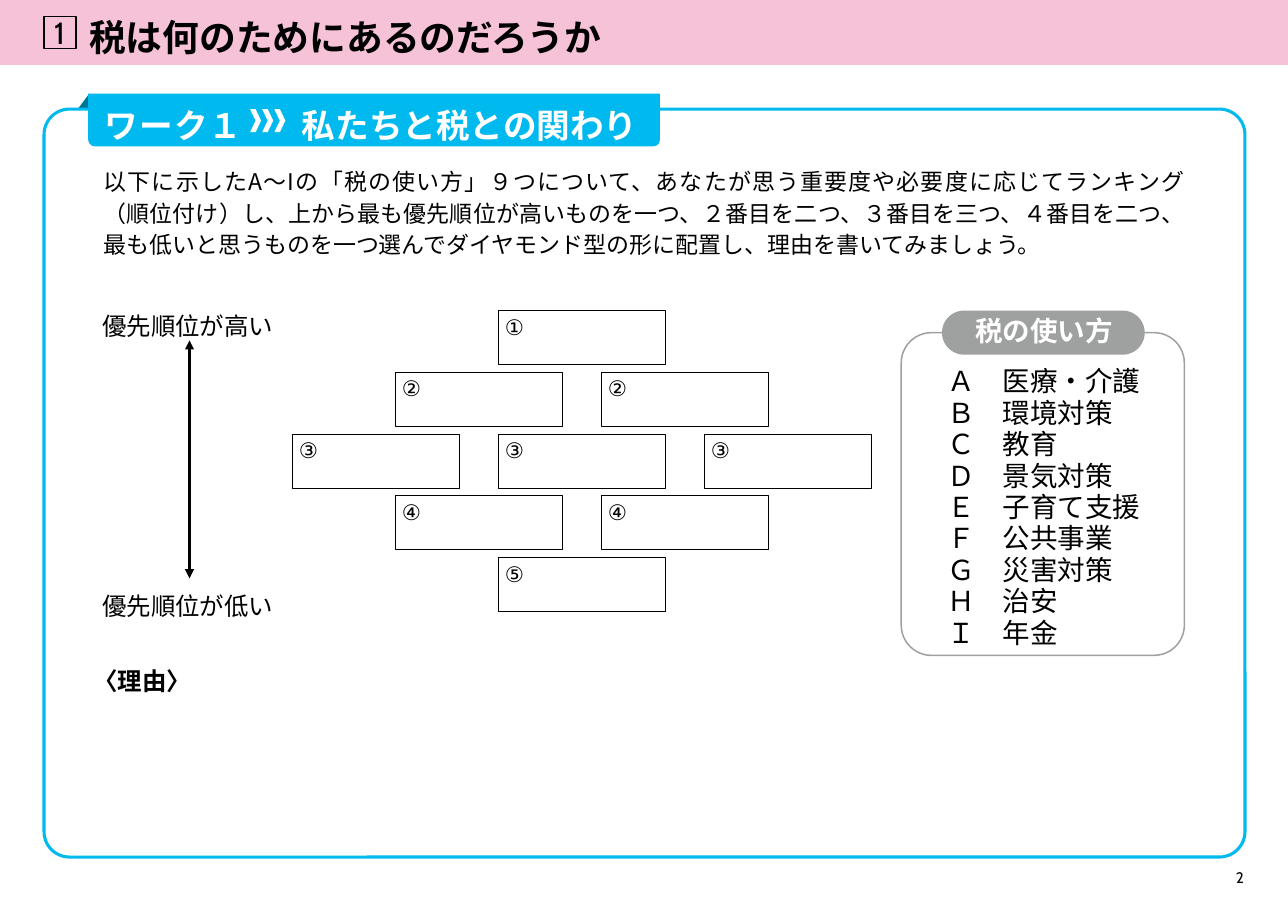
"""Build the worksheet slide on ranking the uses of tax."""
from lxml.etree import SubElement
from pptx import Presentation
from pptx.dml.color import RGBColor
from pptx.enum.shapes import MSO_CONNECTOR as Connector, MSO_SHAPE as Shape
from pptx.enum.text import MSO_ANCHOR as Anchor, MSO_AUTO_SIZE as AutoSize, PP_ALIGN as Align
from pptx.oxml.ns import qn
from pptx.util import Inches, Pt

TITLE = "税は何のためにあるのだろうか"
SECTION_NUMBER = "1"
PAGE_NUMBER = "2"
WORK_LABEL = [("ワー", 1), ("ク", -3), ("１", 0)]
WORK_TITLE = "私たちと税との関わり"
INSTRUCTIONS = [
    ("以下に示したA〜Iの「税の使い方」９つについて、あなたが思う重要度や必要度に応じてランキング", 0.3),
    ("（順位付け）し、上から最も優先順位が高いものを一つ、２番目を二つ、３番目を三つ、４番目を二つ、"
     "最も低いと思うものを一つ選んでダイヤモンド型の形に配置し、理由を書いてみましょう。", 0),
]
HIGH, LOW = "優先順位が高い", "優先順位が低い"
REASON = "〈理由〉"
USES_TITLE = "税の使い方"
USES = ["Ａ　医療・介護", "Ｂ　環境対策", "Ｃ　教育", "Ｄ　景気対策", "Ｅ　子育て支援",
        "Ｆ　公共事業", "Ｇ　災害対策", "Ｈ　治安", "Ｉ　年金"]
RANKS = [("①", 1), ("②", 2), ("③", 3), ("④", 2), ("⑤", 1)]

COLORS = {"pink": "F6C2D8", "blue": "00B9EF", "teal": "007696", "gray": "9FA0A0",
          "black": "000000", "white": "FFFFFF"}
CABIN, NOTO = "Cabin", "Noto Sans CJK JP"


def rgb(name):
    return RGBColor.from_string(COLORS[name])


def add_box(slide, kind, place, fill=None, line=None, width=1, round_by=None):
    box = slide.shapes.add_shape(kind, *map(Inches, place))
    box.shadow.inherit = False
    if round_by is not None:
        box.adjustments[0] = round_by
    if fill:
        box.fill.solid()
        box.fill.fore_color.rgb = rgb(fill)
    else:
        box.fill.background()
    if line:
        box.line.color.rgb = rgb(line)
        box.line.width = Pt(width)
    else:
        box.line.fill.background()
    return box


def write(frame, lines, size, face=CABIN, color="black", bold=False, align=Align.LEFT,
          spacing=None, wrap=False):
    """Fill a frame; a line is a string or a list of (text, letter spacing) pairs."""
    frame.margin_left = frame.margin_right = frame.margin_top = frame.margin_bottom = 0
    frame.word_wrap = wrap
    frame.auto_size = AutoSize.NONE
    frame.vertical_anchor = Anchor.TOP
    for index, line in enumerate(lines):
        paragraph = frame.add_paragraph() if index else frame.paragraphs[0]
        paragraph.alignment = align
        if spacing:
            paragraph.line_spacing = spacing
        font = paragraph.font
        font.size, font.bold, font.name = Pt(size), bold, face
        font.color.rgb = rgb(color)
        SubElement(font._element, qn("a:ea"), typeface=CABIN)
        for text, tracking in [(line, 0)] if isinstance(line, str) else line:
            run = paragraph.add_run()
            run.text = text
            if tracking:
                run.font._element.set("spc", str(round(tracking * 100)))


def add_text(slide, place, lines, size, **style):
    write(slide.shapes.add_textbox(*map(Inches, place)).text_frame, lines, size, **style)


def add_header(slide):
    add_box(slide, Shape.RECTANGLE, (0, 0, 11.69, 0.59), fill="pink")
    add_box(slide, Shape.RECTANGLE, (0.4, 0.15, 0.29, 0.29), line="black")
    title = slide.shapes.title
    title.left, title.top, title.width, title.height = map(Inches, (0.81, 0.13, 10.63, 0.34))
    write(title.text_frame, [TITLE], 24, bold=True)
    slide.shapes._spTree.append(title._element)
    add_text(slide, (0.42, 0.13, 0.24, 0.34), [SECTION_NUMBER], 20, align=Align.CENTER)


def add_work_frame(slide):
    fold = add_box(slide, Shape.ISOSCELES_TRIANGLE, (0.59, 0.95, 0.32, 0.12), fill="teal")
    fold.rotation = 270
    add_box(slide, Shape.ROUNDED_RECTANGLE, (0.4, 0.99, 10.9, 6.79), "white", "blue", 2, 0.034)
    add_box(slide, Shape.RECTANGLE, (0.8, 0.85, 5.19, 0.36), fill="blue")
    add_box(slide, Shape.ROUNDED_RECTANGLE, (0.8, 1.07, 5.19, 0.26), fill="blue", round_by=0.24)
    heading = dict(face=NOTO, color="white", bold=True)
    add_text(slide, (0.95, 0.95, 1.24, 0.29), [WORK_LABEL], 22, **heading)
    for index in range(3):
        add_box(slide, Shape.CHEVRON, (2.27 + index * 0.11, 0.99, 0.1, 0.21), fill="white")
    add_text(slide, (2.74, 0.95, 3.38, 0.29), [WORK_TITLE], 22, **heading)
    add_text(slide, (0.94, 1.49, 9.82, 0.86), [INSTRUCTIONS], 15, face=NOTO,
             align=Align.JUSTIFY, spacing=1.14, wrap=True)


def add_diamond(slide):
    center, top, column_step, row_step = 4.52, 2.82, 1.87, 0.56
    for row, (rank, count) in enumerate(RANKS):
        y = top + row * row_step
        for column in range(count):
            x = center + (column - (count - 1) / 2) * column_step
            add_box(slide, Shape.RECTANGLE, (x, y, 1.52, 0.49), line="black", width=0.5)
            add_text(slide, (x + 0.05, y + 0.03, 0.2, 0.24), [rank], 14, align=Align.CENTER)


def add_priority_scale(slide):
    arrow = slide.shapes.add_connector(
        Connector.STRAIGHT, *map(Inches, (1.72, 3.09, 1.72, 5.25)))
    arrow.line.color.rgb = rgb("black")
    arrow.line.width = Pt(1.5)
    for end in ("a:headEnd", "a:tailEnd"):
        SubElement(arrow.line._get_or_add_ln(), qn(end), type="triangle")
    SubElement(arrow._element.spPr, qn("a:effectLst"))
    for label, y in ((HIGH, 2.82), (LOW, 5.37)):
        add_text(slide, (0.92, y, 1.57, 0.27), [label], 16, align=Align.CENTER)
    add_text(slide, (0.84, 6.05, 0.9, 0.27), [REASON], 16, bold=True, align=Align.CENTER)


def add_uses(slide):
    add_box(slide, Shape.ROUNDED_RECTANGLE, (8.18, 3.02, 2.57, 2.93), line="gray", round_by=0.107)
    add_text(slide, (8.6, 3.33, 1.77, 2.59), USES, 18, spacing=0.95)
    add_box(slide, Shape.ROUNDED_RECTANGLE, (8.55, 2.82, 1.84, 0.4), fill="gray", round_by=0.5)
    add_text(slide, (8.84, 2.85, 1.27, 0.3), [USES_TITLE], 18, face=NOTO, color="white",
             bold=True, align=Align.CENTER)


def main():
    deck = Presentation()
    deck.slide_width, deck.slide_height = Inches(11.69), Inches(8.27)
    slide = deck.slides.add_slide(deck.slide_layouts[5])
    add_header(slide)
    add_work_frame(slide)
    add_diamond(slide)
    add_priority_scale(slide)
    add_uses(slide)
    add_text(slide, (11.14, 7.88, 0.15, 0.17), [PAGE_NUMBER], 10, align=Align.RIGHT)
    deck.save("out.pptx")


if __name__ == "__main__":
    main()
